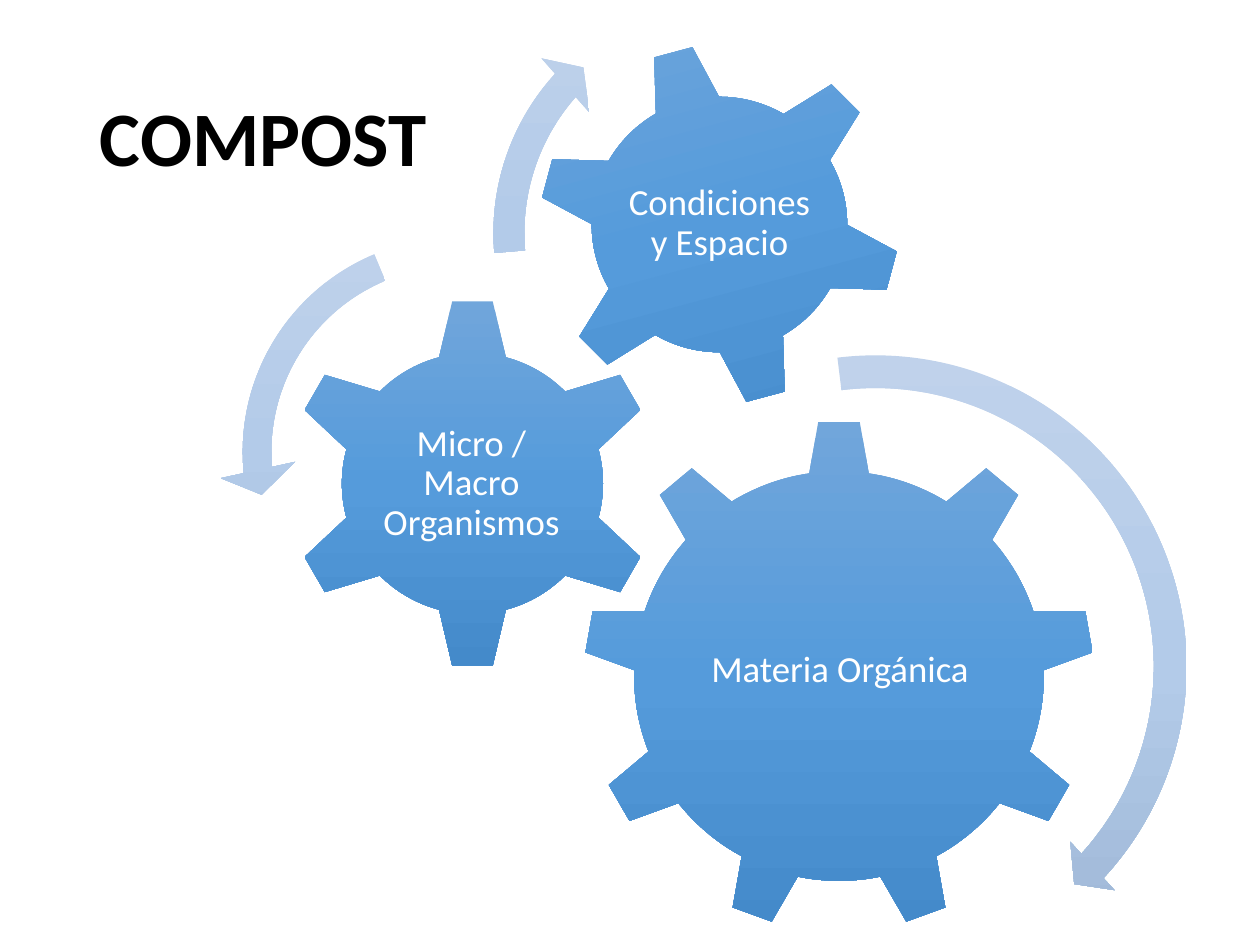
from copy import deepcopy
from pptx import Presentation
from pptx.dml.color import RGBColor
from pptx.enum.shapes import MSO_SHAPE
from pptx.enum.text import MSO_ANCHOR, PP_ALIGN
from pptx.oxml.ns import qn
from pptx.util import Pt

PX = 914400 / 126
COLORS = {"title": "000000", "label": "FFFFFF"}
BLUE = ("71A6DB", "559BDB", "448ACA")
PALE = ("C0D2EB", "B3CBE9", "9BB4D3")

# Content: gears as preset, box, turn, label, label box
TITLE = ("COMPOST", (87, 50, 1086, 183))
GEARS = [
    (MSO_SHAPE.GEAR_9, (583, 420, 512, 512), 0,
     "Materia Orgánica", (687, 539, 306, 263)),
    (MSO_SHAPE.GEAR_6, (286, 297, 373, 373), 0,
     "Micro / Macro Organismos", (379, 392, 185, 184)),
    (MSO_SHAPE.GEAR_6, (537, 42, 365, 365), 345,
     "Condiciones y Espacio", (617, 121, 205, 205)),
]
# Arrows as preset, box, adjustments
ARROWS = [
    (MSO_SHAPE.CIRCULAR_ARROW, (548, 339, 655, 655),
     (0.05, 2.99, 25.56, 157.79, 0.05)),
    (MSO_SHAPE.LEFT_CIRCULAR_ARROW, (219, 214, 476, 476),
     (0.06, 4.3, 104.89, 148.38, 0.08)),
    (MSO_SHAPE.CIRCULAR_ARROW, (473, -24, 514, 514),
     (0.06, 3.94, 133.14, 105.08, 0.07)),
]


def px(*vals):
    return [round(v * PX) for v in vals]


def add_part(slide, kind, box, tones):
    """Preset shape with a three-stop gradient from top to bottom."""
    shape = slide.shapes.add_shape(kind, *px(*box))
    shape.shadow.inherit = False
    shape.line.fill.background()
    fill = shape.fill
    fill.gradient()
    fill.gradient_angle = 270
    stops = next(shape._element.spPr.iter(qn("a:gsLst")))
    stops.insert(1, deepcopy(stops[0]))
    for i, (stop, tone) in enumerate(zip(fill.gradient_stops, tones)):
        stop.position = i / 2
        stop.color.rgb = RGBColor.from_string(tone)
    return shape


def add_text(slide, text, box, size, color, align, pad, bold=False):
    frame = slide.shapes.add_textbox(*px(*box)).text_frame
    frame.word_wrap = True
    frame.vertical_anchor = MSO_ANCHOR.MIDDLE
    (frame.margin_left, frame.margin_top,
     frame.margin_right, frame.margin_bottom) = px(*pad)
    para = frame.paragraphs[0]
    para.alignment = align
    para.line_spacing = 0.9
    run = para.add_run()
    run.text = text
    font = run.font
    font.name, font.size, font.bold = "Calibri", Pt(size), bold
    font.color.rgb = RGBColor.from_string(COLORS[color])


def main():
    prs = Presentation()
    prs.slide_width, prs.slide_height = px(1260, 945)
    slide = prs.slides.add_slide(prs.slide_layouts[6])

    # Title
    add_text(slide, *TITLE, 44, "title", PP_ALIGN.LEFT, (13, 6, 13, 6), True)

    # Gears and their labels
    for kind, box, turn, label, area in GEARS:
        add_part(slide, kind, box, BLUE).rotation = turn
        add_text(slide, label, area, 21, "label", PP_ALIGN.CENTER, (4,) * 4)

    # Turning arrows
    for kind, box, adjs in ARROWS:
        arrow = add_part(slide, kind, box, PALE)
        for i, adj in enumerate(adjs):
            arrow.adjustments[i] = adj

    prs.save("out.pptx")


if __name__ == "__main__":
    main()
